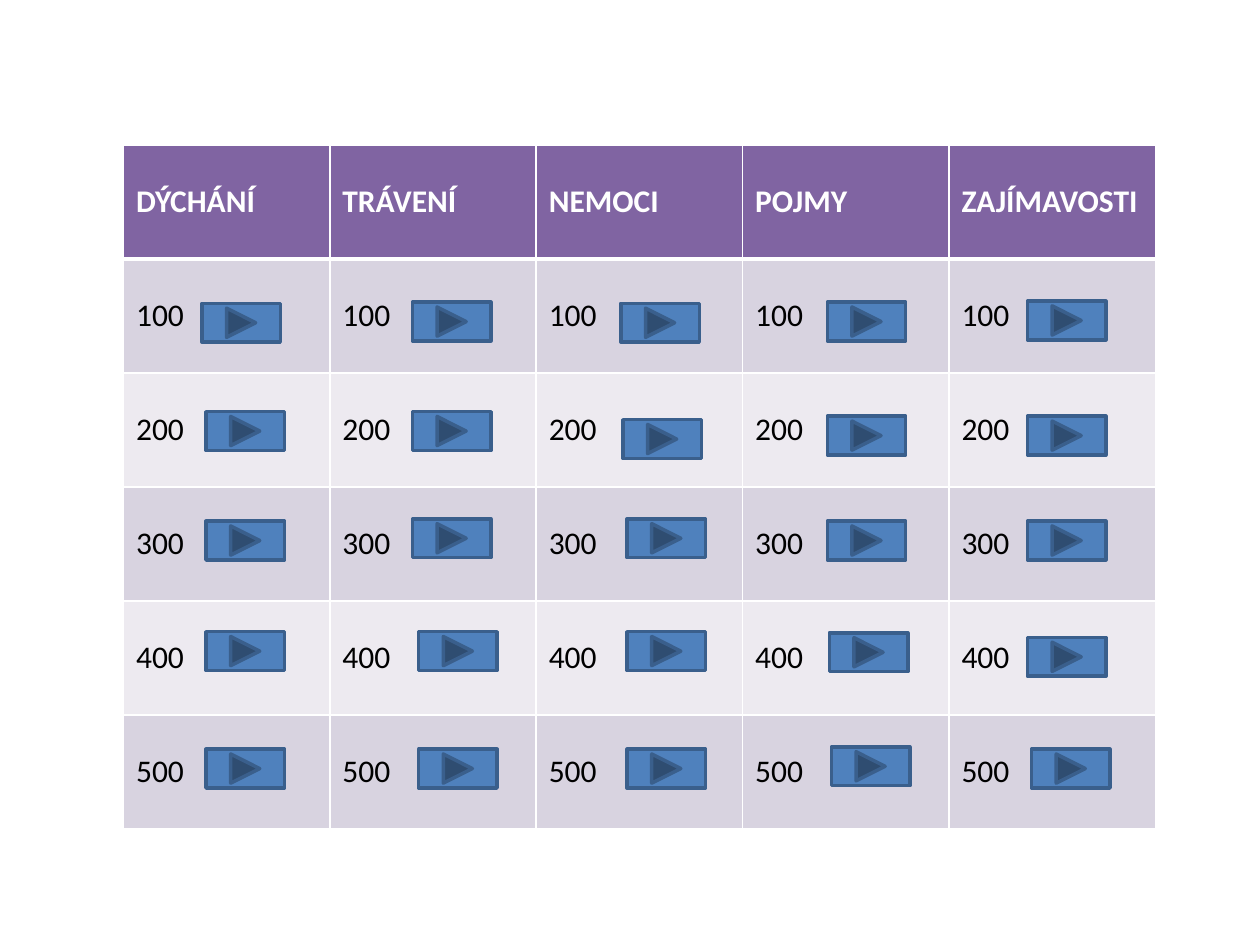
from itertools import product
from lxml.etree import SubElement
from pptx import Presentation
from pptx.dml.color import RGBColor
from pptx.enum.shapes import MSO_SHAPE
from pptx.enum.text import MSO_ANCHOR
from pptx.oxml.ns import qn
from pptx.util import Inches, Pt

WHITE = RGBColor(0xFF, 0xFF, 0xFF)
BLACK = RGBColor(0, 0, 0)
PURPLE = RGBColor(0x80, 0x64, 0xA2)
LILAC = RGBColor(0xD8, 0xD3, 0xE0)
PALE = RGBColor(0xED, 0xEA, 0xF0)
BLUE = RGBColor(0x4F, 0x81, 0xBD)
NAVY = RGBColor(0x3A, 0x5F, 0x8C)

WIDE, HIGH = Inches(10), Inches(7.5)
BOARD = (Inches(0.98), Inches(1.15), Inches(8.19), Inches(5.43))
TOPICS = ["DÝCHÁNÍ", "TRÁVENÍ", "NEMOCI", "POJMY", "ZAJÍMAVOSTI"]
POINTS = ["100", "200", "300", "400", "500"]
COLS, ROWS = len(TOPICS), len(POINTS) + 1

HEAD = {"size": Pt(18), "name": "Calibri", "bold": True}
BODY = {**HEAD, "bold": False}

SIZE = (0.38, 0.34)
LEFTS = [
    [0.38, 0.40, 0.40, 0.40, 0.40],
    [0.40, 0.40, 0.40, 0.43, 0.43],
    [0.41, 0.42, 0.44, 0.44, 0.44],
    [0.41, 0.41, 0.41, 0.42, 0.43],
    [0.38, 0.38, 0.38, 0.38, 0.40],
]
TOPS = [
    [0.39, 0.34, 0.30, 0.27, 0.30],
    [0.38, 0.34, 0.28, 0.27, 0.30],
    [0.39, 0.41, 0.28, 0.27, 0.30],
    [0.38, 0.38, 0.30, 0.28, 0.28],
    [0.37, 0.38, 0.30, 0.32, 0.30],
]


def style(item, values):
    for name, value in values.items():
        setattr(item, name, value)


def edge(cell, sides):
    props = cell._tc.get_or_add_tcPr()
    for side, width in sides.items():
        line = SubElement(props, qn(f"a:ln{side}"), w=str(Pt(width)))
        fill = SubElement(line, qn("a:solidFill"))
        SubElement(fill, qn("a:srgbClr"), val=str(WHITE))


def paint(cell, text, row):
    fill = PURPLE if row == 0 else (PALE, LILAC)[row % 2]
    edge(cell, {"L": 1, "R": 1, "T": 3 if row == 1 else 1, "B": 3 if row == 0 else 1})
    style(cell, {"text": text, "vertical_anchor": MSO_ANCHOR.MIDDLE})
    cell.fill.solid()
    cell.fill.fore_color.rgb = fill
    font = cell.text_frame.paragraphs[0].runs[0].font
    style(font, BODY if row else HEAD)
    font.color.rgb = BLACK if row else WHITE


def add_board(slide, box):
    table = slide.shapes.add_table(ROWS, COLS, *box).table
    for part in table.columns:
        part.width = int(box[2] / COLS)
    for part in table.rows:
        part.height = int(box[3] / ROWS)
    for row, col in product(range(ROWS), range(COLS)):
        text = POINTS[row - 1] if row else TOPICS[col]
        paint(table.cell(row, col), text, row)


def add_keys(slide, box):
    left, top, width, height = box
    wide, high = width / COLS, height / ROWS
    for col, row in product(range(COLS), range(len(POINTS))):
        key = slide.shapes.add_shape(
            MSO_SHAPE.ACTION_BUTTON_FORWARD_OR_NEXT,
            int(left + (col + LEFTS[col][row]) * wide),
            int(top + (row + 1 + TOPS[col][row]) * high),
            int(SIZE[0] * wide),
            int(SIZE[1] * high),
        )
        key.shadow.inherit = False
        key.fill.solid()
        key.fill.fore_color.rgb = BLUE
        key.line.color.rgb = NAVY
        key.line.width = Pt(2)


def main():
    deck = Presentation()
    style(deck, {"slide_width": WIDE, "slide_height": HIGH})
    slide = deck.slides.add_slide(deck.slide_layouts[6])
    add_board(slide, BOARD)
    add_keys(slide, BOARD)
    deck.save("out.pptx")


if __name__ == "__main__":
    main()
